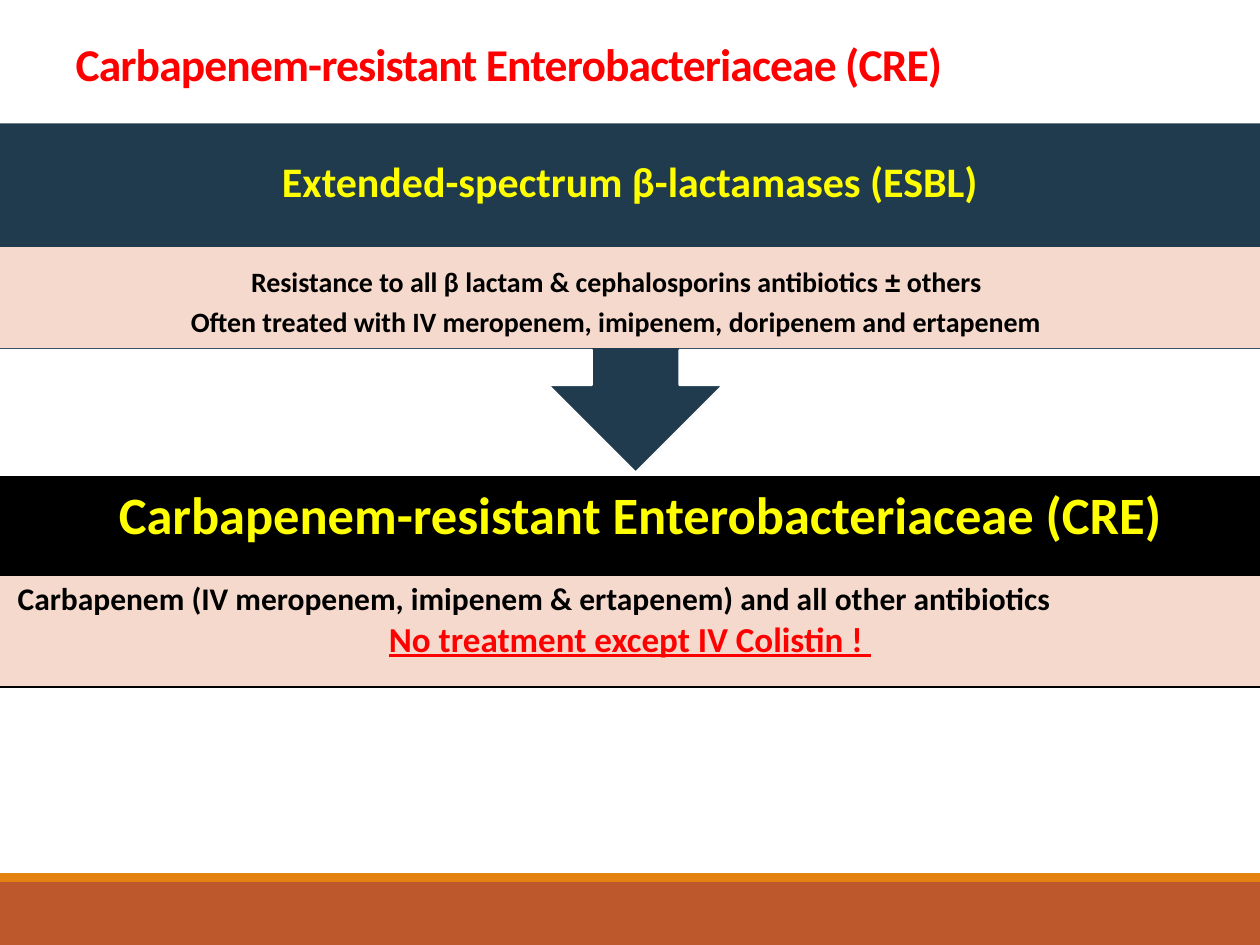
from pptx import Presentation
from pptx.dml.color import RGBColor
from pptx.enum.shapes import MSO_SHAPE as Shape
from pptx.enum.text import MSO_ANCHOR as Anchor, MSO_AUTO_SIZE as AutoSize, PP_ALIGN as Align
from pptx.util import Inches, Pt

RED = RGBColor(0xFF, 0x00, 0x00)
YELLOW = RGBColor(0xFF, 0xFF, 0x00)
BLACK = RGBColor(0x00, 0x00, 0x00)
WHITE = RGBColor(0xFF, 0xFF, 0xFF)
NAVY = RGBColor(0x20, 0x3A, 0x4E)
PINK = RGBColor(0xF5, 0xD9, 0xCC)
RUST = RGBColor(0xBD, 0x58, 0x2C)
ORANGE = RGBColor(0xE4, 0x83, 0x12)

TITLE = "Carbapenem-resistant Enterobacteriaceae (CRE)"


def inches(box):
    return [Inches(length) for length in box]


def add_block(slide, kind, box, fill, line=None):
    shape = slide.shapes.add_shape(kind, *inches(box))
    shape.shadow.inherit = False
    shape.fill.solid()
    shape.fill.fore_color.rgb = fill
    if line is None:
        shape.line.fill.background()
    else:
        shape.line.color.rgb = line
        shape.line.width = Pt(1.25)
    return shape


def add_text_box(slide, box, inset=(0.14, 0.03)):
    frame = slide.shapes.add_textbox(*inches(box)).text_frame
    frame.word_wrap = True
    frame.vertical_anchor = Anchor.MIDDLE
    frame.margin_left = frame.margin_right = Inches(inset[0])
    frame.margin_top = frame.margin_bottom = Inches(inset[1])
    return frame


def write(paragraph, text, *, size, color, font="Calibri", align=Align.CENTER,
          spacing=1.0, underline=None):
    paragraph.alignment = align
    paragraph.line_spacing = spacing
    run = paragraph.add_run()
    run.text = text
    run.font.name = font
    run.font.size = Pt(size)
    run.font.bold = True
    run.font.underline = underline
    run.font.color.rgb = color
    return run


def add_title(slide, box):
    title = slide.shapes.title
    title.left, title.top, title.width, title.height = inches(box)
    frame = title.text_frame
    frame.auto_size = AutoSize.NONE
    frame.vertical_anchor = Anchor.BOTTOM
    run = write(frame.paragraphs[0], TITLE, size=26, color=RED,
                align=Align.LEFT, spacing=0.85)
    run.font._element.set("spc", "-50")


def add_footer(slide, left, top, width, height):
    stripe = 0.07
    add_block(slide, Shape.RECTANGLE, (left, top + stripe, width, height - stripe), RUST)
    add_block(slide, Shape.RECTANGLE, (left, top, width, stripe), ORANGE)


def add_heading(slide, box, text, size):
    frame = add_text_box(slide, box, inset=(0.23, 0.23))
    write(frame.paragraphs[0], text, size=size, color=YELLOW, spacing=0.9)


def add_esbl_region(slide, left, top, width, height):
    callout = add_block(slide, Shape.UP_ARROW_CALLOUT,
                        (left - 0.08, top, width + 0.25, height), NAVY, WHITE)
    callout.rotation = 180
    add_heading(slide, (left, top, width, 0.98),
                "Extended-spectrum β-lactamases (ESBL)", 24)
    add_block(slide, Shape.RECTANGLE, (left - 0.17, top + 1, width + 0.25, 0.78), PINK, PINK)

    frame = add_text_box(slide, (left + 0.28, top + 1.05, 9.22, 0.78))
    style = dict(size=16, color=BLACK, spacing=0.9)
    resistance = frame.paragraphs[0]
    write(resistance, "Resistance to all β lactam & cephalosporins antibiotics ", **style)
    write(resistance, "± ", font="Arial Narrow", **style)
    write(resistance, "others", **style)
    resistance.space_after = Pt(5.6)
    write(frame.add_paragraph(),
          "Often treated with IV meropenem, imipenem, doripenem and ertapenem", **style)


def add_cre_region(slide, left, top, width, height):
    add_block(slide, Shape.RECTANGLE, (left - 0.04, top, width, height), BLACK, WHITE)
    add_heading(slide, (left, top - 0.03, width, 0.74), TITLE, 30)
    add_block(slide, Shape.RECTANGLE, (left, top + 0.81, width, 0.86), PINK, PINK)

    frame = add_text_box(slide, (left, top + 0.82, 10, 0.65))
    write(frame.paragraphs[0],
          "Carbapenem (IV meropenem, imipenem & ertapenem) and all other antibiotics",
          size=18, color=BLACK, align=Align.LEFT)
    write(frame.add_paragraph(), "No treatment except IV Colistin ! ",
          size=20, color=RED, underline=True)


def main():
    presentation = Presentation()
    presentation.slide_width = Inches(10)
    presentation.slide_height = Inches(7.5)
    slide = presentation.slides.add_slide(presentation.slide_layouts[5])
    add_footer(slide, 0, 6.93, 10, 0.57)
    add_title(slide, (0.5, -0.48, 9, 1.25))
    add_esbl_region(slide, 0, 0.97, 10, 2.78)
    add_cre_region(slide, 0, 3.77, 10.17, 1.7)
    presentation.save("out.pptx")


if __name__ == "__main__":
    main()
